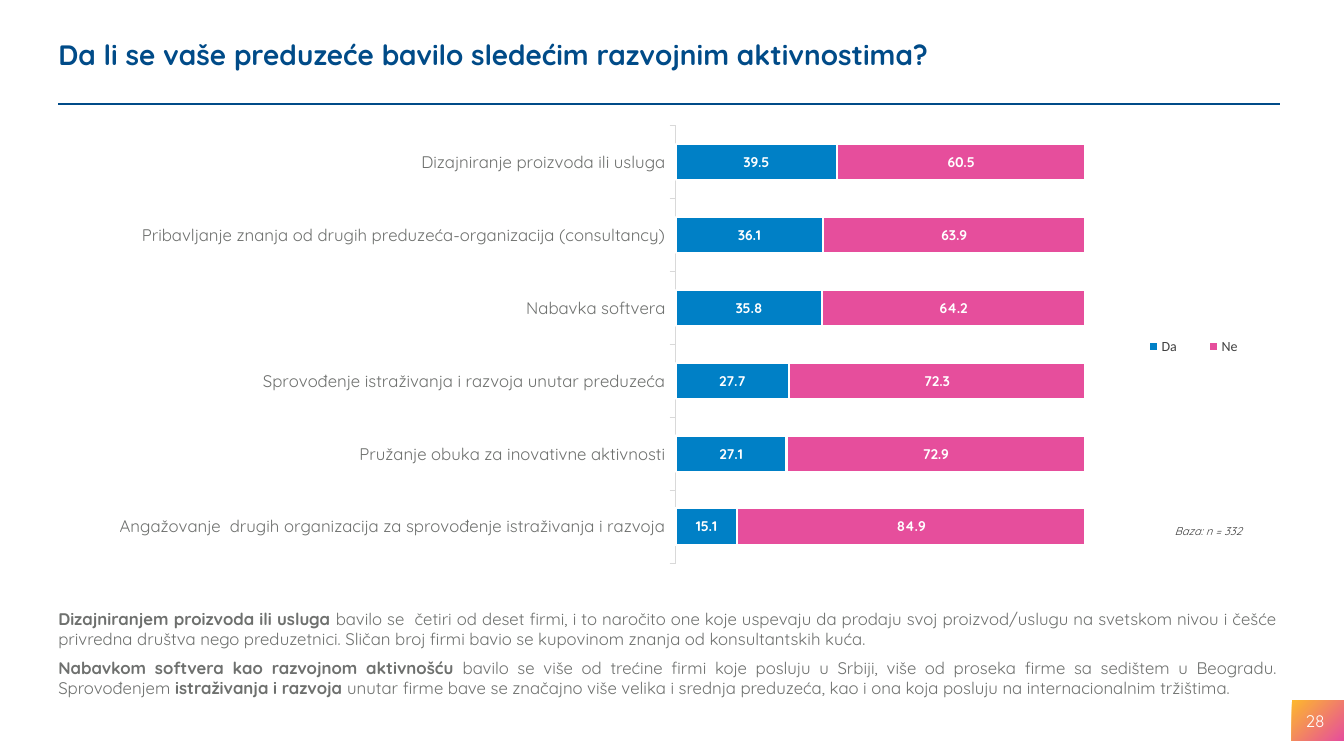
import pptx
import pptx.chart.data
import pptx.dml.color
import pptx.enum.chart
import pptx.enum.shapes
import pptx.enum.text
import pptx.oxml
import pptx.oxml.ns
import pptx.util
from pptx.util import Cm

ANCHOR = pptx.enum.text.MSO_ANCHOR
ALIGN = pptx.enum.text.PP_ALIGN
GROW = pptx.enum.text.MSO_AUTO_SIZE.SHAPE_TO_FIT_TEXT
NAVY, BLUE, PINK, YELLOW = "004B88", "0080C6", "E64E9C", "FDB82E"
GREY, DARK, PALE, WHITE = "6E706E", "404040", "D9D9D9", "FFFFFF"

ACTIVITIES = {
    "Dizajniranje proizvoda ili usluga": (39.5, 60.5),
    "Pribavljanje znanja od drugih preduzeća-organizacija (consultancy)": (36.1, 63.9),
    "Nabavka softvera": (35.8, 64.2),
    "Sprovođenje istraživanja i razvoja unutar preduzeća": (27.7, 72.3),
    "Pružanje obuka za inovativne aktivnosti": (27.1, 72.9),
    "Angažovanje  drugih organizacija za sprovođenje istraživanja i razvoja": (15.1, 84.9),
}
ANSWERS = (("Da", BLUE, "#,##0.0"), ("Ne", PINK, "###0.0"))
FINDINGS = [
    [
        ("Dizajniranjem proizvoda ili usluga ", True),
        ("bavilo se  četiri od deset firmi, i to naročito one koje uspevaju da "
         "prodaju svoj proizvod/uslugu na svetskom nivou i češće privredna društva "
         "nego preduzetnici. Sličan broj firmi bavio se kupovinom znanja od "
         "konsultantskih kuća.", False),
    ],
    [
        ("Nabavkom softvera kao razvojnom aktivnošću ", True),
        ("bavilo se više od trećine firmi koje posluju u Srbiji, više od proseka "
         "firme sa sedištem u Beogradu. Sprovođenjem ", False),
        ("istraživanja i razvoja ", True),
        ("unutar firme bave se značajno više velika i srednja preduzeća, kao i ona "
         "koja posluju na internacionalnim tržištima.", False),
    ],
]


def paint(target, colour):
    target.rgb = pptx.dml.color.RGBColor.from_string(colour)


def apply(target, values):
    for name, value in values.items():
        setattr(target, name, value)


def style_font(font, size, colour, name="Quicksand", **extra):
    apply(font, {"name": name, "size": pptx.util.Pt(size), **extra})
    paint(font.color, colour)


def style_line(line, colour, width):
    line.width = pptx.util.Pt(width)
    line.fill.solid()
    paint(line.fill.fore_color, colour)


def add_text(page, place, paragraphs, size, colour, frame=None, layout=None, **font):
    box = page.shapes.add_textbox(*map(Cm, place))
    apply(box.text_frame, {"word_wrap": True, **(frame or {})})
    for index, spans in enumerate(paragraphs):
        para = box.text_frame.add_paragraph() if index else box.text_frame.paragraphs[0]
        apply(para, layout or {})
        for text, bold in spans:
            span = para.add_run()
            span.text = text
            style_font(span.font, size, colour, bold=bold, **font)


def add_rule(page, left, top, right):
    rule = page.shapes.add_connector(
        pptx.enum.shapes.MSO_CONNECTOR.STRAIGHT, Cm(left), Cm(top), Cm(right), Cm(top))
    style_line(rule.line, NAVY, 1.5)
    properties = rule.element.spPr
    properties.append(properties.makeelement(pptx.oxml.ns.qn("a:effectLst"), {}))


def add_badge(page, place):
    badge = page.shapes.add_shape(
        pptx.enum.shapes.MSO_SHAPE.RECTANGLE, *map(Cm, place))
    badge.shadow.inherit = False
    badge.line.fill.background()
    badge.fill.gradient()
    badge.fill.gradient_angle = 315
    for stop, colour in zip(badge.fill.gradient_stops, (YELLOW, PINK)):
        paint(stop.color, colour)


def set_layout(element, index, place, inner=False):
    for old in element.findall(pptx.oxml.ns.qn("c:layout")):
        element.remove(old)
    parts = [("layoutTarget", "inner")] if inner else []
    parts += [("xMode", "edge"), ("yMode", "edge"), *zip("xywh", place)]
    marks = "".join(f'<c:{name} val="{value}"/>' for name, value in parts)
    namespace = pptx.oxml.ns.nsdecls("c")
    element.insert(index, pptx.oxml.parse_xml(
        f"<c:layout {namespace}><c:manualLayout>{marks}</c:manualLayout></c:layout>"))


def style_series(series, colour, number_format):
    series.format.fill.solid()
    paint(series.format.fill.fore_color, colour)
    style_line(series.format.line, WHITE, 1.5)
    labels = series.data_labels
    apply(labels, {"show_value": True, "number_format": number_format,
                   "number_format_is_linked": False})
    style_font(labels.font, 10, WHITE, bold=True)


def add_activity_chart(page, place):
    data = pptx.chart.data.CategoryChartData(number_format="0.0")
    data.categories = list(ACTIVITIES)
    for (answer, _, _), values in zip(ANSWERS, zip(*ACTIVITIES.values())):
        data.add_series(answer, values)
    chart = page.shapes.add_chart(
        pptx.enum.chart.XL_CHART_TYPE.BAR_STACKED_100, *map(Cm, place), data).chart
    apply(chart, {"has_title": False, "has_legend": True})
    style_font(chart.font, 10, "000000", "Calibri")
    plot = chart.plots[0]
    apply(plot, {"gap_width": 100, "overlap": 100, "vary_by_categories": False})
    for series, (_, colour, number_format) in zip(plot.series, ANSWERS):
        style_series(series, colour, number_format)
    apply(chart.value_axis, {"visible": False, "has_major_gridlines": False})
    axis = chart.category_axis
    apply(axis, {"reverse_order": True, "has_major_gridlines": False,
                 "major_tick_mark": pptx.enum.chart.XL_TICK_MARK.OUTSIDE})
    style_font(axis.tick_labels.font, 12, GREY)
    style_line(axis.format.line, PALE, 0.75)
    legend = chart.legend
    apply(legend, {"position": pptx.enum.chart.XL_LEGEND_POSITION.BOTTOM,
                   "include_in_layout": False})
    style_font(legend.font, 10, DARK, "Calibri")
    plot_area = chart.element.find(".//" + pptx.oxml.ns.qn("c:plotArea"))
    set_layout(plot_area, 0, (0.5, 0.056, 0.34, 0.87), inner=True)
    legend_element = chart.element.find(".//" + pptx.oxml.ns.qn("c:legend"))
    set_layout(legend_element, 1, (0.87, 0.46, 0.12, 0.07))


def main():
    deck = pptx.Presentation()
    apply(deck, {"slide_width": Cm(33.87), "slide_height": Cm(19.05)})
    page = deck.slides.add_slide(deck.slide_layouts[6])
    middle = {"vertical_anchor": ANCHOR.MIDDLE}
    add_rule(page, 1.47, 2.62, 32.26)
    add_badge(page, (32.56, 17.65, 1.3, 1.02))
    add_activity_chart(page, (1.85, 2.46, 30.35, 12.67))
    add_text(page, (1.47, 15.21, 30.73, 3.02), FINDINGS, 12, GREY,
             {"margin_left": 0, "margin_right": 0, "auto_size": GROW},
             {"alignment": ALIGN.JUSTIFY, "space_after": pptx.util.Pt(6)})
    add_text(page, (26.01, 17.65, 7.62, 1.02), [[("28", False)]], 12, WHITE,
             middle, {"alignment": ALIGN.RIGHT})
    add_text(page, (1.47, 0.41, 31.19, 2.01),
             [[("Da li se vaše preduzeće bavilo sledećim razvojnim aktivnostima?", True)]],
             20, NAVY, {"margin_left": 0, **middle}, {"line_spacing": 0.9})
    add_text(page, (29.21, 13.08, 2.49, 0.61), [[("Baza: n = 332", False)]], 8, DARK,
             {"auto_size": GROW}, {"alignment": ALIGN.CENTER}, italic=True)
    deck.save("out.pptx")


if __name__ == "__main__":
    main()
